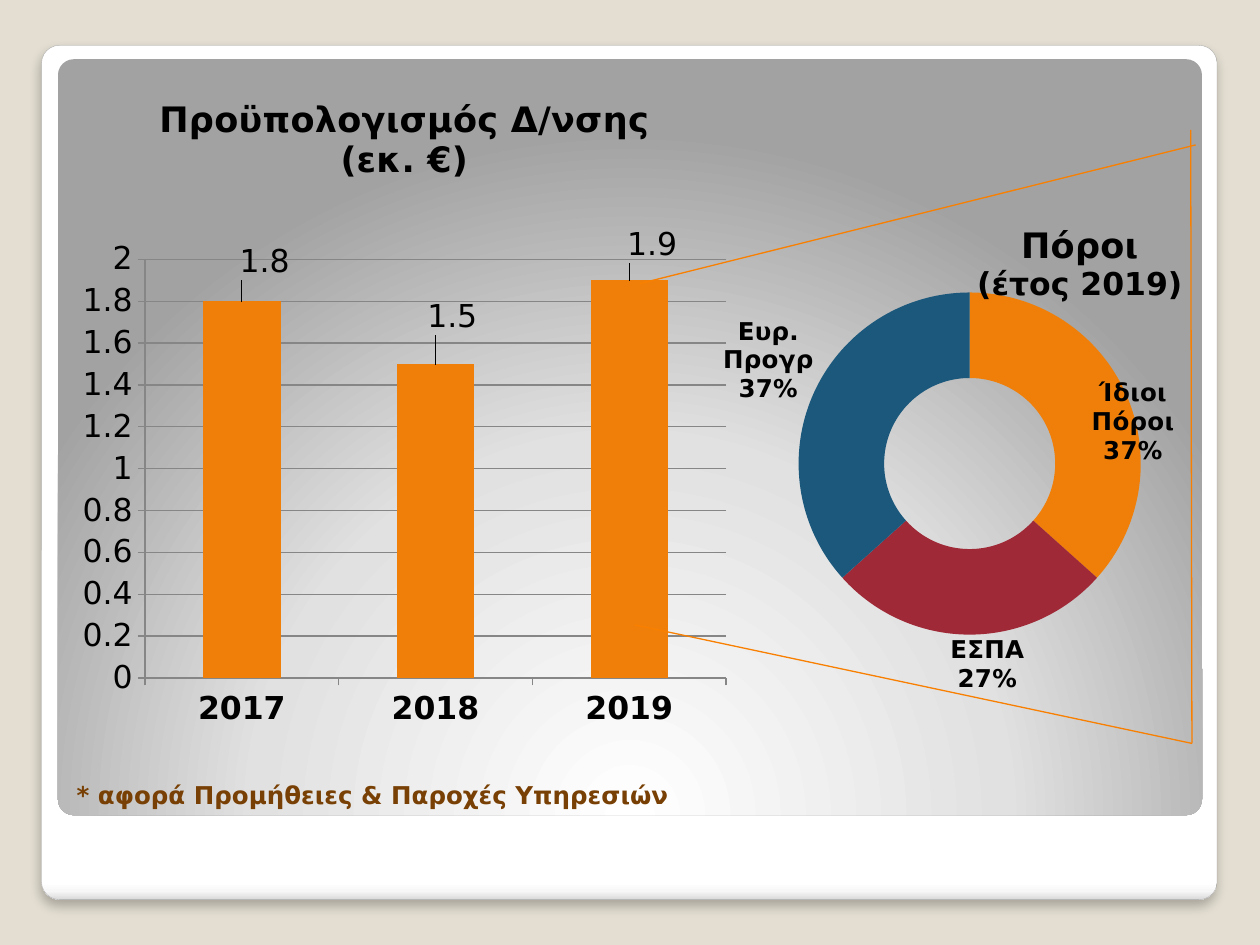
from pptx import Presentation
from pptx.chart.data import CategoryChartData as ChartData
from pptx.dml.color import RGBColor as Rgb
from pptx.enum.chart import XL_CHART_TYPE as ChartType, XL_TICK_MARK as Tick
from pptx.enum.shapes import MSO_CONNECTOR as Connector, MSO_SHAPE as Shape
from pptx.enum.text import MSO_ANCHOR as Anchor
from pptx.oxml import parse_xml
from pptx.oxml.ns import qn
from pptx.util import Inches, Pt

FONT = "DejaVu Sans"
COLORS = {
    "page": "E3DED1", "edge": "A4A4A4", "text": "000000", "note": "784004",
    "grid": "868686", "line": "F97F00",
    "orange": "F07F09", "red": "9F2936", "blue": "1B587C",
}
NS_A = 'xmlns:a="http://schemas.openxmlformats.org/drawingml/2006/main"'
NS_C = 'xmlns:c="http://schemas.openxmlformats.org/drawingml/2006/chart"'


def color(name):
    return Rgb.from_string(COLORS[name])


def style_font(font, **values):
    font.color.rgb = color(values.pop("color", "text"))
    for name, value in {"name": FONT, **values}.items():
        setattr(font, name, value)


def add_panel(page, place, stops, direction):
    """Rounded panel with a gradient fill and no outline."""
    panel = page.shapes.add_shape(Shape.ROUNDED_RECTANGLE, *map(Inches, place))
    panel.adjustments[0] = 0.021
    panel.shadow.inherit = False
    panel.line.fill.background()
    panel.fill.background()
    marks = "".join(f'<a:gs pos="{pos * 1000}"><a:srgbClr val="{shade}"/></a:gs>'
                    for pos, shade in stops)
    gradient = parse_xml(f'<a:gradFill {NS_A} rotWithShape="1"><a:gsLst>{marks}</a:gsLst>'
                         f'{direction}</a:gradFill>')
    props = panel._element.spPr
    props.replace(props.find(qn("a:noFill")), gradient)
    return panel


def add_soft_shadow(panel):
    panel._element.spPr.find(qn("a:effectLst")).append(parse_xml(
        f'<a:outerShdw {NS_A} blurRad="{Pt(6)}" dist="{Pt(4)}" dir="5400000" algn="t" '
        'rotWithShape="0"><a:srgbClr val="000000"><a:alpha val="25000"/></a:srgbClr>'
        '</a:outerShdw>'))


def layout(x, y, w=None, h=None, inner=False, edge=True):
    """Manual chart layout, as fractions of the chart area."""
    parts = ['<c:layoutTarget val="inner"/>'] if inner else []
    if edge:
        parts += ['<c:xMode val="edge"/>', '<c:yMode val="edge"/>']
    parts += [f'<c:{key} val="{value}"/>' for key, value in zip("xywh", (x, y, w, h))
              if value is not None]
    return parse_xml(f'<c:layout {NS_C}><c:manualLayout>{"".join(parts)}'
                     '</c:manualLayout></c:layout>')


def add_chart(page, kind, place, categories, values, plot_area):
    data = ChartData()
    data.categories = categories
    data.add_series("Series 1", values)
    chart = page.shapes.add_chart(kind, *map(Inches, place), data).chart
    style_font(chart.font, size=Pt(18))
    chart.has_legend = False
    area = chart._chartSpace.chart.plotArea
    for old in area.findall(qn("c:layout")):
        area.remove(old)
    area.insert(0, layout(*plot_area, inner=True))
    return chart


def set_title(chart, lines, corner=None):
    chart.has_title = True
    title = chart.chart_title
    frame = title.text_frame
    for index, (text, size) in enumerate(lines):
        para = frame.paragraphs[0] if index == 0 else frame.add_paragraph()
        span = para.add_run()
        span.text = text
        style_font(span.font, size=Pt(size), bold=True)
    title.include_in_layout = False
    if corner:
        element = title._element
        for old in element.findall(qn("c:layout")):
            element.remove(old)
        element.find(qn("c:tx")).addnext(layout(*corner))


def set_labels(series, shifts, shown, size, bold, position=""):
    """Data labels, each one moved from its default place."""
    style_font(series.data_labels.font, size=Pt(size), bold=bold)
    labels = series._element.find(qn("c:dLbls"))
    flags = "".join(f'<c:show{key} val="{int(key in shown)}"/>' for key in
                    ("LegendKey", "Val", "CatName", "SerName", "Percent", "BubbleSize"))
    for index, shift in enumerate(shifts):
        label = parse_xml(
            f'<c:dLbl {NS_C} {NS_A}><c:idx val="{index}"/><c:spPr><a:noFill/></c:spPr>'
            f'<c:txPr><a:bodyPr/><a:p><a:pPr><a:defRPr sz="{size * 100}" b="{int(bold)}">'
            f'<a:solidFill><a:srgbClr val="{COLORS["text"]}"/></a:solidFill>'
            f'<a:latin typeface="{FONT}"/></a:defRPr></a:pPr><a:endParaRPr/></a:p></c:txPr>'
            f'{position}{flags}<c:separator>\n</c:separator></c:dLbl>')
        label.insert(1, layout(*shift, edge=False))
        labels.insert(index, label)
    for key in ("Val", "CatName", "Percent"):
        flag = labels.find(qn(f"c:show{key}"))
        if flag is not None:
            flag.set("val", str(int(key in shown)))


def add_budget_chart(page):
    chart = add_chart(page, ChartType.COLUMN_CLUSTERED, (0.55, 0.58, 5.32, 5.3),
                      ("2017", "2018", "2019"), (1.8, 1.5, 1.9), (0.113, 0.279, 0.867, 0.627))
    set_title(chart, [("Προϋπολογισμός Δ/νσης", 20), ("(εκ. €)", 20)])
    plot = chart.plots[0]
    plot.gap_width = 150
    plot.vary_by_categories = False
    series = plot.series[0]
    series.format.fill.solid()
    series.format.fill.fore_color.rgb = color("orange")
    set_labels(series, [(0.034, -0.024), (0.025, -0.036), (0.034, -0.018)],
               ("Val",), 18, False, '<c:dLblPos val="outEnd"/>')
    scale = chart.value_axis
    for name, value in {"minimum_scale": 0, "maximum_scale": 2, "major_unit": 0.2,
                        "has_major_gridlines": True}.items():
        setattr(scale, name, value)
    for axis, bold in ((chart.category_axis, True), (scale, False)):
        axis.major_tick_mark = Tick.OUTSIDE
        style_font(axis.tick_labels.font, size=Pt(18), bold=bold)
        axis.format.line.color.rgb = color("grid")
    scale.major_gridlines.format.line.color.rgb = color("grid")


def add_sources_chart(page):
    chart = add_chart(page, ChartType.DOUGHNUT, (5.39, 1.7, 4.17, 4.09),
                      ("Ίδιοι Πόροι", "ΕΣΠΑ", "Ευρ. Προγρ"), (37, 27, 37),
                      (0.152, 0.152, 0.802, 0.664))
    set_title(chart, [("Πόροι", 20), ("(έτος 2019)", 18)], (0.56, 0.01))
    series = chart.plots[0].series[0]
    for index, name in enumerate(("orange", "red", "blue")):
        fill = series.points[index].format.fill
        fill.solid()
        fill.fore_color.rgb = color(name)
    set_labels(series, [(0.088, 0.02), (0.034, 0.14), (-0.16, -0.1)],
               ("CatName", "Percent"), 14, True)


def add_note(page, text):
    box = page.shapes.add_textbox(*map(Inches, (0.51, 5.32, 8.95, 1.15)))
    frame = box.text_frame
    frame.word_wrap = True
    frame.vertical_anchor = Anchor.BOTTOM
    span = frame.paragraphs[0].add_run()
    span.text = text
    style_font(span.font, size=Pt(14), bold=True, color="note")


def add_line(page, start, end):
    line = page.shapes.add_connector(Connector.STRAIGHT, *map(Inches, start + end))
    line.line.color.rgb = color("line")
    line.line.width = Pt(0.75)
    line._element.spPr.append(parse_xml(f"<a:effectLst {NS_A}/>"))


def main():
    deck = Presentation()
    deck.slide_width, deck.slide_height = Inches(10), Inches(7.5)
    page = deck.slides.add_slide(deck.slide_layouts[6])
    page.background.fill.solid()
    page.background.fill.fore_color.rgb = color("page")

    # Framed backdrop
    frame = add_panel(page, (0.33, 0.36, 9.33, 6.78),
                      [(0, "FFFFFF"), (98, "FFFFFF"), (99, "F7F7F7"), (100, "DADADA")],
                      '<a:lin ang="5400000" scaled="0"/>')
    frame.line.color.rgb = color("edge")
    frame.line.width = Pt(0.16)
    add_soft_shadow(frame)
    add_panel(page, (0.46, 0.47, 9.08, 6), [(0, "FFFFFF"), (55, "E1E1E1"), (100, "A2A2A2")],
              '<a:path path="circle"><a:fillToRect l="50000" t="175000" r="50000" b="-75000"/>'
              '</a:path>')

    # Footnote and charts
    add_note(page, "* αφορά Προμήθειες & Παροχές Υπηρεσιών")
    add_budget_chart(page)
    add_sources_chart(page)

    # Lines opening from the 2019 column to its sources
    corner = (9.46, 5.9)
    add_line(page, (5.08, 2.25), (9.49, 1.15))
    add_line(page, (5.04, 4.96), corner)
    add_line(page, (9.45, 1.03), corner)

    deck.save("out.pptx")


if __name__ == "__main__":
    main()
